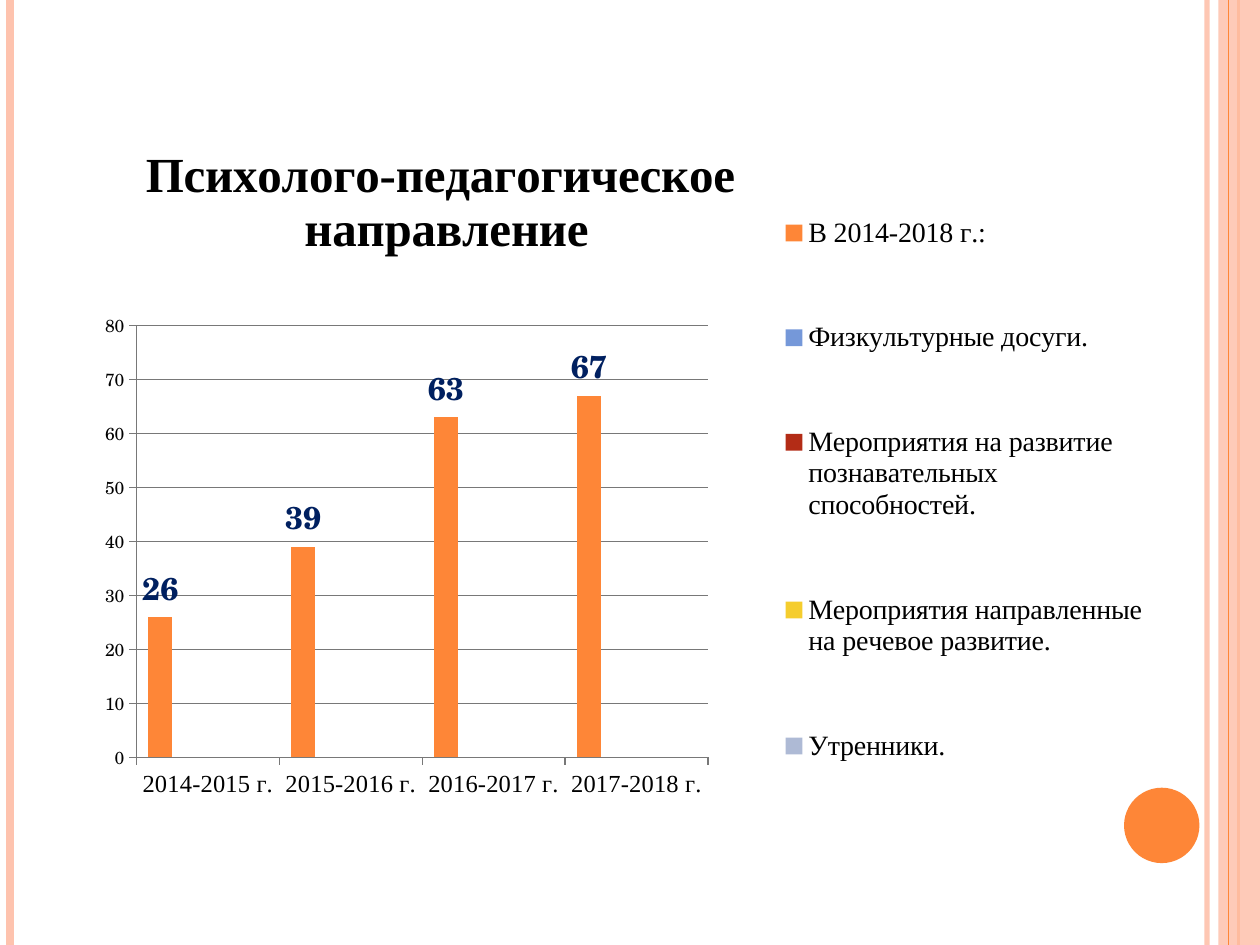
from typing import NamedTuple

import lxml.etree
import pptx
import pptx.chart.data
import pptx.dml.color
import pptx.enum.chart
import pptx.enum.shapes
import pptx.oxml.ns
import pptx.util

Cm = pptx.util.Cm
Pt = pptx.util.Pt
RGBColor = pptx.dml.color.RGBColor
qn = pptx.oxml.ns.qn

PEACH = RGBColor(0xFE, 0xC3, 0xAE)
ORANGE = RGBColor(0xFE, 0x86, 0x37)
BLUE = RGBColor(0x75, 0x98, 0xD9)
RED = RGBColor(0xB3, 0x2C, 0x16)
YELLOW = RGBColor(0xF5, 0xCD, 0x2D)
LAVENDER = RGBColor(0xAE, 0xBA, 0xD5)
NAVY = RGBColor(0x00, 0x20, 0x60)
BLACK = RGBColor(0, 0, 0)
GRAY = RGBColor(0x78, 0x78, 0x78)

SERIF = "Times New Roman"
SCHOOLBOOK = "TeX Gyre Schola"
SLIDE_WIDTH = Cm(25.4)
SLIDE_HEIGHT = Cm(19.05)


class Stripe(NamedTuple):
    x: float
    color: RGBColor
    width: float
    opacity: int = 100


class Activity(NamedTuple):
    name: str
    color: RGBColor
    counts: tuple = (None,) * 4


class Area(NamedTuple):
    x: float
    y: float
    w: float
    h: float


OUTER_STRIPES = [
    Stripe(24.33, PEACH, 3, 93),
    Stripe(0.2, PEACH, 4.5),
    Stripe(24.97, ORANGE, 1.5),
]
BAND_STRIPE = Stripe(24.77, ORANGE, 0.75)
YEARS = ["2014-2015 г.", "2015-2016 г.", "2016-2017 г.", "2017-2018 г."]
ACTIVITIES = [
    Activity("В 2014-2018 г.:", ORANGE, (26, 39, 63, 67)),
    Activity("Физкультурные досуги.", BLUE),
    Activity("Мероприятия на развитие познавательных способностей.", RED),
    Activity("Мероприятия направленные на речевое развитие.", YELLOW),
    Activity("Утренники.", LAVENDER),
]


def set_opacity(fill_parent, percent: int) -> None:
    color = next(fill_parent.iter(qn("a:srgbClr")))
    lxml.etree.SubElement(color, qn("a:alpha"), val=str(percent * 1000))


def draw_stripe(slide, stripe: Stripe) -> None:
    line = slide.shapes.add_connector(
        pptx.enum.shapes.MSO_CONNECTOR.STRAIGHT,
        Cm(stripe.x), 0, Cm(stripe.x), SLIDE_HEIGHT)
    line.line.color.rgb = stripe.color
    line.line.width = Pt(stripe.width)
    properties = line._element.spPr
    if stripe.opacity < 100:
        set_opacity(properties, stripe.opacity)
    lxml.etree.SubElement(properties, qn("a:effectLst"))


def draw_solid(slide, kind, box: Area, color: RGBColor):
    solid = slide.shapes.add_shape(kind, *(Cm(length) for length in box))
    solid.shadow.inherit = False
    solid.fill.solid()
    solid.fill.fore_color.rgb = color
    solid.line.fill.background()
    return solid


def place(element, index: int, area: Area, inner: bool = False) -> None:
    for old in element.findall(qn("c:layout")):
        element.remove(old)
    layout = lxml.etree.Element(qn("c:layout"))
    manual = lxml.etree.SubElement(layout, qn("c:manualLayout"))
    settings = [("layoutTarget", "inner")] if inner else []
    settings += [("xMode", "edge"), ("yMode", "edge")]
    settings += [(key, str(value)) for key, value in area._asdict().items() if value]
    for key, value in settings:
        lxml.etree.SubElement(manual, qn(f"c:{key}"), val=value)
    element.insert(index, layout)


def style_title(chart) -> None:
    title = chart.chart_title
    title.text_frame.text = "Психолого-педагогическое \nнаправление"
    for paragraph in title.text_frame.paragraphs:
        paragraph.font.name = SERIF
        paragraph.font.size = Pt(28)
        paragraph.font.bold = True
        paragraph.font.color.rgb = BLACK
    place(title._element, 1, Area(0.048, 0.058, 0, 0))


def style_axes(chart) -> None:
    years, counts = chart.category_axis, chart.value_axis
    years.tick_labels.font.name = SERIF
    years.tick_labels.font.size = Pt(14)
    counts.maximum_scale = 80
    counts.minimum_scale = 0
    counts.major_unit = 10
    counts.has_major_gridlines = True
    for line in (years.format.line, counts.format.line,
                 counts.major_gridlines.format.line):
        line.color.rgb = GRAY
        line.width = Pt(0.75)


def style_legend(chart) -> None:
    chart.has_legend = True
    legend = chart.legend
    legend.position = pptx.enum.chart.XL_LEGEND_POSITION.RIGHT
    legend.include_in_layout = False
    legend.font.name = SERIF
    legend.font.size = Pt(16)
    place(legend._element, 1, Area(0.61, 0.06, 0.34, 0.9))


def style_columns(chart) -> None:
    columns = chart.plots[0]
    columns.gap_width = 100
    columns.overlap = 0
    columns.vary_by_categories = False
    for series, activity in zip(columns.series, ACTIVITIES):
        series.format.fill.solid()
        series.format.fill.fore_color.rgb = activity.color
    labels = columns.series[0].data_labels
    labels.show_value = True
    labels.position = pptx.enum.chart.XL_LABEL_POSITION.OUTSIDE_END
    labels.font.name = SCHOOLBOOK
    labels.font.size = Pt(18)
    labels.font.bold = True
    labels.font.color.rgb = NAVY


def draw_chart(slide) -> None:
    data = pptx.chart.data.CategoryChartData()
    data.categories = YEARS
    for activity in ACTIVITIES:
        data.add_series(activity.name, activity.counts)
    chart = slide.shapes.add_chart(
        pptx.enum.chart.XL_CHART_TYPE.COLUMN_CLUSTERED,
        Cm(1.78), Cm(1.98), Cm(22.63), Cm(15.47), data).chart
    chart.font.name = SCHOOLBOOK
    chart.font.size = Pt(10)
    chart.font.color.rgb = BLACK
    style_title(chart)
    style_axes(chart)
    style_legend(chart)
    style_columns(chart)
    body = chart._chartSpace.chart
    place(body.plotArea, 0, Area(0.043, 0.296, 0.509, 0.563), inner=True)
    background = lxml.etree.Element(qn("c:spPr"))
    lxml.etree.SubElement(background, qn("a:noFill"))
    border = lxml.etree.SubElement(background, qn("a:ln"))
    lxml.etree.SubElement(border, qn("a:noFill"))
    body.addnext(background)


def main() -> None:
    deck = pptx.Presentation()
    deck.slide_width = SLIDE_WIDTH
    deck.slide_height = SLIDE_HEIGHT
    slide = deck.slides.add_slide(deck.slide_layouts[6])
    shapes = pptx.enum.shapes.MSO_SHAPE
    for stripe in OUTER_STRIPES:
        draw_stripe(slide, stripe)
    band = draw_solid(slide, shapes.RECTANGLE, Area(24.56, 0, 0.84, 19.05), PEACH)
    set_opacity(band._element.spPr, 87)
    draw_stripe(slide, BAND_STRIPE)
    draw_solid(slide, shapes.OVAL, Area(22.66, 15.88, 1.52, 1.52), ORANGE)
    draw_chart(slide)
    deck.save("out.pptx")


if __name__ == "__main__":
    main()
